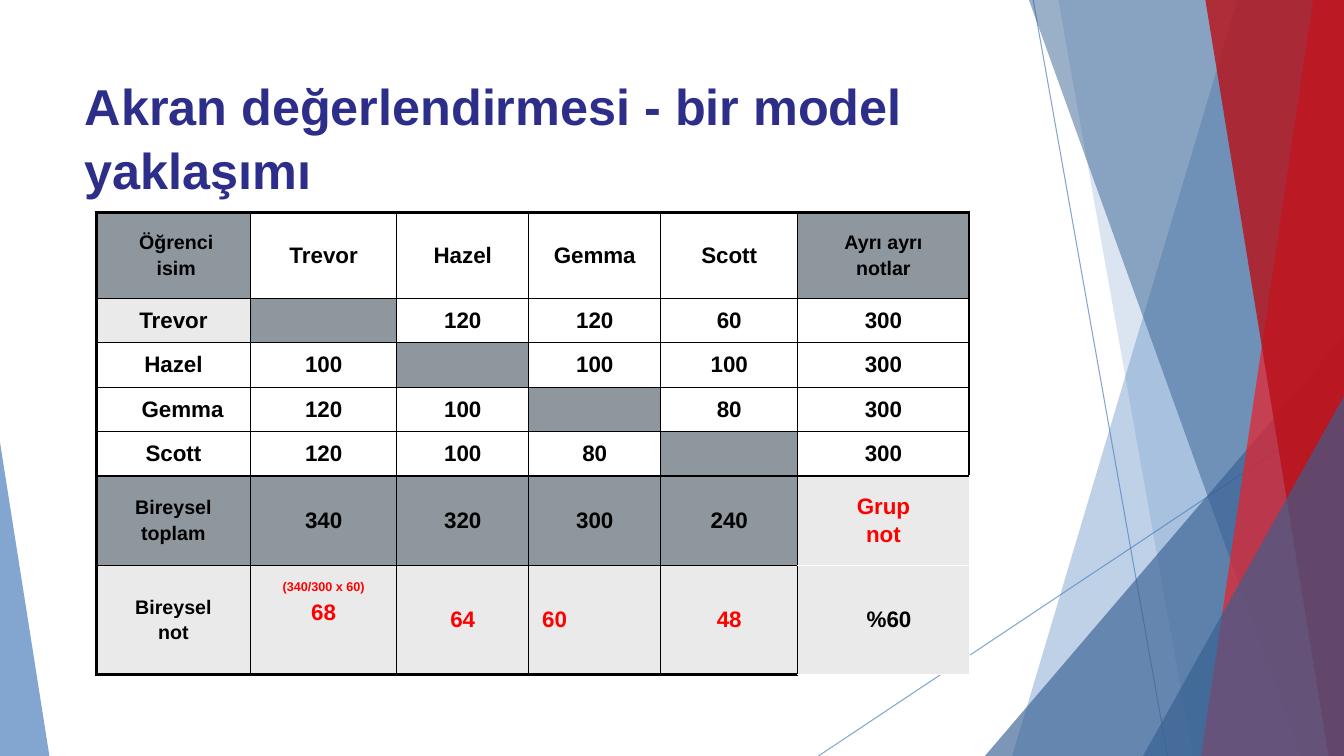
from dataclasses import dataclass

from lxml import etree
from pptx import Presentation
from pptx.dml.color import RGBColor
from pptx.enum import shapes, text
from pptx.oxml import ns
from pptx.util import Pt


@dataclass(frozen=True)
class Theme:
    font: str = "Arial"
    title: str = "2D2D8A"
    ink: str = "000000"
    white: str = "FFFFFF"
    grade: str = "FF0000"
    dark: str = "8E979E"
    light: str = "EAEAEA"
    blue: str = "4F81BD"
    navy: str = "376092"
    red: str = "EC1F29"
    crimson: str = "B91018"
    title_size: float = 36
    cell_size: float = 16
    label_size: float = 14
    note_size: float = 9


THEME = Theme()
WIDTH, HEIGHT = 960, 540

MARKS = [
    ["Öğrenci\nisim", "Trevor", "Hazel", "Gemma", "Scott", "Ayrı ayrı\nnotlar"],
    ["Trevor", "", "120", "120", "60", "300"],
    ["Hazel", "100", "", "100", "100", "300"],
    ["Gemma", "120", "100", "", "80", "300"],
    ["Scott", "120", "100", "80", "", "300"],
    ["Bireysel\ntoplam", "340", "320", "300", "240", "Grup\nnot"],
    ["Bireysel\nnot", "(340/300 x 60)\n68", "64", "60", "48", "%60"],
]
COLUMNS = [110.2, 104.4, 94.3, 94.3, 97.9, 122.4]
ROWS = [61.2, 31.7, 31.7, 31.7, 31.7, 64.1, 77.8]
TOTALS, GRADES, LAST = 5, 6, 5
LABELS = {(0, 0), (0, LAST), (TOTALS, 0), (GRADES, 0)}
EXTRA_LEFT = {(0, 0): 4, (3, 0): 13, (GRADES, LAST): 8, (GRADES, 3): 2.4}


def write(para, words, size, color=THEME.ink, align=text.PP_ALIGN.CENTER, before=0):
    para.alignment = align
    para.space_before = Pt(before)
    span = para.add_run()
    span.text = words
    span.font.name = THEME.font
    span.font.size = Pt(size)
    span.font.bold = True
    span.font.color.rgb = RGBColor.from_string(color)


def set_alpha(shape_or_line, percent):
    """Make the first colour inside the element see-through."""
    color = shape_or_line._element.spPr.find(".//" + ns.qn("a:srgbClr"))
    etree.SubElement(color, ns.qn("a:alpha")).set("val", str(percent * 1000))


def paint(shape, color, percent):
    shape.shadow.inherit = False
    shape.fill.solid()
    shape.fill.fore_color.rgb = RGBColor.from_string(color)
    shape.line.fill.background()
    set_alpha(shape, percent)


def add_ray(page, start, end):
    ray = page.shapes.add_connector(
        shapes.MSO_CONNECTOR.STRAIGHT, *(Pt(value) for value in start + end))
    ray.line.color.rgb = RGBColor.from_string(THEME.blue)
    ray.line.width = Pt(0.75)
    set_alpha(ray, 70)
    etree.SubElement(ray._element.spPr, ns.qn("a:effectLst"))


def add_band(page, top, bottom, color, percent):
    """Fill from a slanted left edge to the right side of the slide."""
    outline = page.shapes.build_freeform(Pt(top), 0)
    outline.add_line_segments([(Pt(WIDTH), 0), (Pt(WIDTH), Pt(HEIGHT)), (Pt(bottom), Pt(HEIGHT))])
    paint(outline.convert_to_shape(), color, percent)


def add_corner(page, left, top, width, peak, color, percent):
    """Stand a triangle on the bottom edge of the slide."""
    corner = page.shapes.add_shape(
        shapes.MSO_SHAPE.ISOSCELES_TRIANGLE, Pt(left), Pt(top), Pt(width), Pt(HEIGHT - top))
    corner.adjustments[0] = peak
    paint(corner, color, percent)


def add_facets(page):
    add_ray(page, (738, 0), (834, HEIGHT))
    add_ray(page, (WIDTH, 290), (584.6, HEIGHT))
    add_band(page, 884, 723, THEME.blue, 36)
    add_band(page, 756, 852, THEME.blue, 20)
    add_corner(page, 703.5, 240, 256.5, 1, THEME.navy, 66)
    add_band(page, 735, 929.5, THEME.navy, 50)
    add_band(page, 938, 858, THEME.red, 70)
    add_band(page, 861, 949, THEME.crimson, 80)
    add_corner(page, 816.5, 283, 143.5, 1, THEME.navy, 66)
    add_corner(page, 0, 316, 35.3, 0, THEME.blue, 70)


def add_title(page, left, top, width, height):
    title = page.shapes.title
    title.left, title.top, title.width, title.height = map(Pt, (left, top, width, height))
    frame = title.text_frame
    frame.word_wrap = True
    frame.auto_size = text.MSO_AUTO_SIZE.NONE
    frame.vertical_anchor = text.MSO_ANCHOR.TOP
    para = frame.paragraphs[0]
    para.line_spacing = 1.05
    write(para, "Akran değerlendirmesi - bir model yaklaşımı",
          THEME.title_size, THEME.title, text.PP_ALIGN.LEFT)


def cell_shade(row, col):
    if (row, col) in {(0, 0), (0, LAST)} or 0 < row == col < LAST:
        return THEME.dark
    if row == TOTALS:
        return THEME.light if col == LAST else THEME.dark
    return THEME.light if row == GRADES or (row, col) == (1, 0) else None


def cell_edges(row, col):
    """Give the width and colour of each side; the group mark has white outer sides."""
    thin, thick, pale = (1, THEME.ink), (2.25, THEME.ink), (1, THEME.white)
    edges = {"L": thick if col == 0 else thin, "R": thick if col == LAST else thin,
             "T": thick if row == 0 else thin, "B": thick if row == GRADES else thin}
    if col == LAST and row >= TOTALS:
        edges.update(R=pale, B=pale, T=pale if row == GRADES else thin)
    return edges


def style_cell(cell, row, col):
    properties = cell._tc.get_or_add_tcPr()
    for side, (width, color) in cell_edges(row, col).items():
        line = etree.SubElement(properties, ns.qn("a:ln" + side), w=str(int(Pt(width))))
        fill = etree.SubElement(line, ns.qn("a:solidFill"))
        etree.SubElement(fill, ns.qn("a:srgbClr"), val=color)
    shade = cell_shade(row, col)
    if shade:
        cell.fill.solid()
        cell.fill.fore_color.rgb = RGBColor.from_string(shade)
    else:
        cell.fill.background()
    cell.vertical_anchor = text.MSO_ANCHOR.MIDDLE
    cell.margin_left = Pt(7.2 + EXTRA_LEFT.get((row, col), 0))


def fill_cell(cell, row, col, words):
    is_grade = (row, col) == (TOTALS, LAST) or (row == GRADES and 0 < col < LAST)
    has_note = words.startswith("(")
    if has_note:
        cell.vertical_anchor = text.MSO_ANCHOR.TOP
        cell.margin_top = Pt(10.4)
    for index, line in enumerate(words.split("\n") if words else []):
        para = cell.text_frame.paragraphs[0] if index == 0 else cell.text_frame.add_paragraph()
        size = THEME.label_size if (row, col) in LABELS else THEME.cell_size
        if has_note and index == 0:
            size = THEME.note_size
        write(para, line, size, THEME.grade if is_grade else THEME.ink,
              text.PP_ALIGN.LEFT if (row, col) == (GRADES, 3) else text.PP_ALIGN.CENTER,
              index * (4.3 if has_note else 2.5))


def add_marks(page, left, top):
    table = page.shapes.add_table(
        len(ROWS), len(COLUMNS), Pt(left), Pt(top), Pt(sum(COLUMNS)), Pt(sum(ROWS))).table
    table.first_row = table.horz_banding = False
    for column, width in zip(table.columns, COLUMNS):
        column.width = Pt(width)
    for row, height in enumerate(ROWS):
        table.rows[row].height = Pt(height)
        for col, words in enumerate(MARKS[row]):
            style_cell(table.cell(row, col), row, col)
            fill_cell(table.cell(row, col), row, col, words)


def main():
    deck = Presentation()
    deck.slide_width, deck.slide_height = Pt(WIDTH), Pt(HEIGHT)
    page = deck.slides.add_slide(deck.slide_layouts[5])
    add_facets(page)
    add_title(page, 53.3, 48.2, 676.8, 103.7)
    add_marks(page, 68.8, 152)
    deck.save("out.pptx")


if __name__ == "__main__":
    main()
